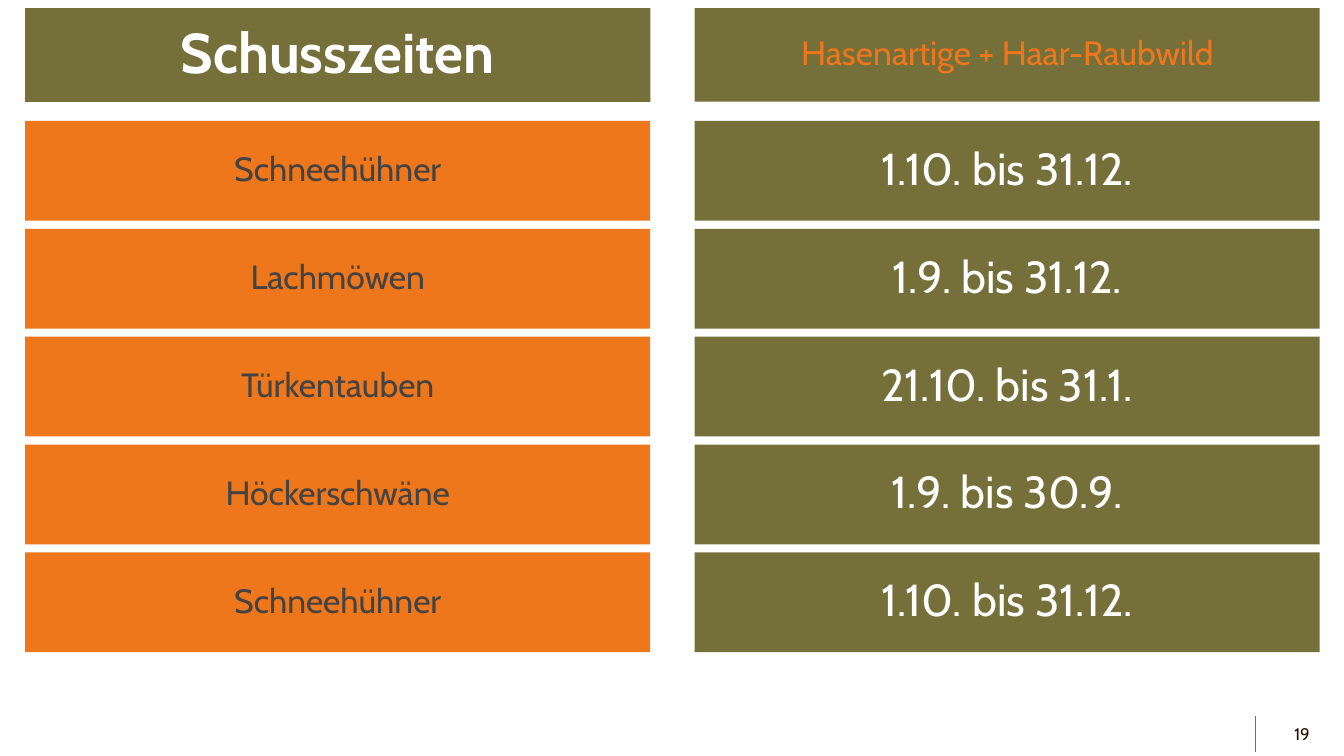
from pptx import Presentation
from pptx.dml.color import RGBColor
from pptx.enum.shapes import MSO_CONNECTOR, MSO_SHAPE
from pptx.enum.text import MSO_ANCHOR, MSO_AUTO_SIZE, PP_ALIGN
from pptx.oxml.ns import qn
from pptx.util import Inches, Pt
from lxml.etree import SubElement

OLIVE, ORANGE, WHITE, GREY, DARK = "756F3A", "EE771B", "FFFFFF", "434343", "231001"
FONT = "Cabin"
LEFT_X, RIGHT_X, BAR_W = 0.25, 6.89, 6.2
HEADER_Y, HEADER_H = 0.08, 0.93
ROW_Y, ROW_H, ROW_STEP = 1.2, 0.99, 1.07
SEASONS = [
    ("Schneehühner", "1.10. bis 31.12."),
    ("Lachmöwen", "1.9. bis 31.12."),
    ("Türkentauben", "21.10. bis 31.1."),
    ("Höckerschwäne", "1.9. bis 30.9."),
    ("Schneehühner", "1.10. bis 31.12."),
]


def rgb(value):
    """Return the colour for a hex string."""
    return RGBColor.from_string(value)


def set_text(sp, text, size=24, color=WHITE, bold=False, align=PP_ALIGN.CENTER, spacing=0.9):
    """Write one vertically centred, formatted paragraph into a shape."""
    tf = sp.text_frame
    tf.word_wrap = True
    tf.auto_size = MSO_AUTO_SIZE.NONE
    tf.vertical_anchor = MSO_ANCHOR.MIDDLE
    p = tf.paragraphs[0]
    p.alignment = align
    p.line_spacing = spacing
    p.space_before = Pt(0)
    r = p.add_run()
    r.text = text
    r.font.name = FONT
    r.font.size = Pt(size)
    r.font.bold = bold
    r.font.color.rgb = rgb(color)


def style_bar(sp, fill):
    """Give a bar a flat fill without outline."""
    sp.fill.solid()
    sp.fill.fore_color.rgb = rgb(fill)
    sp.line.fill.background()
    sp.shadow.inherit = False


def add_title(s, text):
    """Place the title placeholder as the left header bar."""
    sp = s.shapes.title
    sp.left, sp.top = Inches(LEFT_X), Inches(HEADER_Y)
    sp.width, sp.height = Inches(BAR_W), Inches(HEADER_H)
    style_bar(sp, OLIVE)
    set_text(sp, text, size=40, bold=True)


def add_bar(s, x, y, h, fill, text, **fmt):
    """Add a filled rectangle with text."""
    sp = s.shapes.add_shape(MSO_SHAPE.RECTANGLE, Inches(x), Inches(y), Inches(BAR_W), Inches(h))
    style_bar(sp, fill)
    set_text(sp, text, **fmt)


def add_page_number(s, text):
    """Add the page number and the thin rule beside it."""
    rule = s.shapes.add_connector(
        MSO_CONNECTOR.STRAIGHT, Inches(12.45), Inches(7.1), Inches(12.45), Inches(7.46))
    rule.line.color.rgb = rgb(OLIVE)
    rule.line.width = Pt(0.75)
    SubElement(rule.line._get_or_add_ln().getparent(), qn("a:effectLst"))
    box = s.shapes.add_textbox(Inches(12.58), Inches(7.08), Inches(0.51), Inches(0.4))
    set_text(box, text, size=12, color=DARK, align=PP_ALIGN.RIGHT, spacing=1.0)


def main():
    """Build and save the slide."""
    prs = Presentation()
    prs.slide_width, prs.slide_height = Inches(13.33), Inches(7.5)
    s = prs.slides.add_slide(prs.slide_layouts[5])
    add_title(s, "Schusszeiten")
    add_bar(s, RIGHT_X, HEADER_Y, HEADER_H, OLIVE, "Hasenartige + Haar-Raubwild", color=ORANGE)
    for i, (species, season) in enumerate(SEASONS):
        y = ROW_Y + i * ROW_STEP
        add_bar(s, LEFT_X, y, ROW_H, ORANGE, species, color=GREY)
        add_bar(s, RIGHT_X, y, ROW_H, OLIVE, season, size=32)
    add_page_number(s, "19")
    prs.save("out.pptx")


if __name__ == "__main__":
    main()
